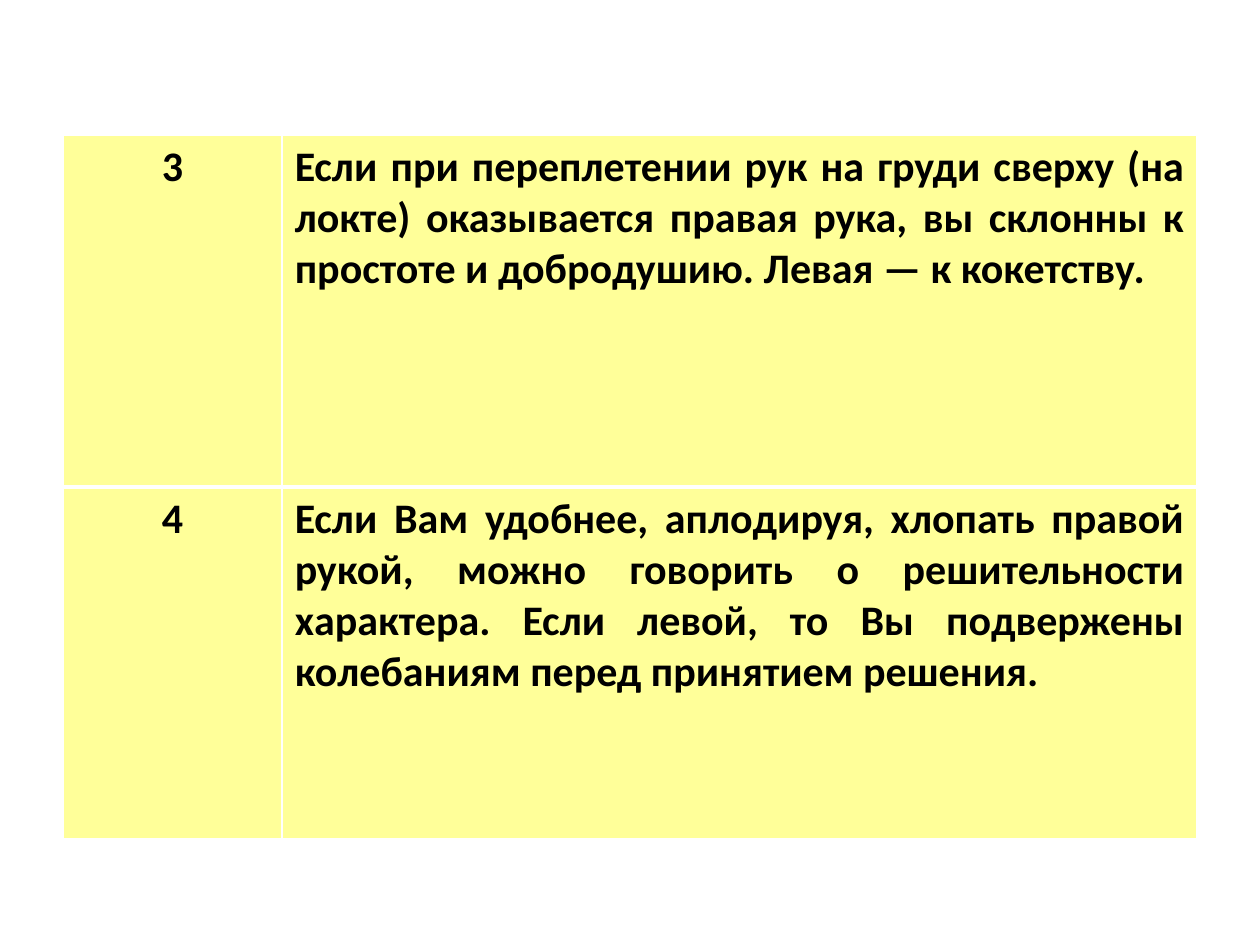
import pptx
import pptx.dml.color
import pptx.enum.text
import pptx.oxml.ns
import pptx.util
from lxml import etree
from pptx.util import Inches

ALIGN = pptx.enum.text.PP_ALIGN
WHITE, BLACK, YELLOW = "FFFFFF", "000000", "FFFF99"
WIDTHS = (1.74, 7.26)
HEIGHT = 2.795
ROWS = (
    ("3", "Если при переплетении рук на груди сверху (на локте) оказывается "
          "правая рука, вы склонны к простоте и добродушию. "
          "Левая — к кокетству."),
    ("4", "Если Вам удобнее, аплодируя, хлопать правой рукой, можно говорить "
          "о решительности характера. Если левой, то Вы подвержены "
          "колебаниям перед принятием решения."),
)


def color(code):
    return pptx.dml.color.RGBColor.from_string(code)


def add_edge(cell, side, width):
    """Draw one white cell border, its width in points."""
    qn = pptx.oxml.ns.qn
    props = cell._tc.get_or_add_tcPr()
    line = etree.SubElement(props, qn(f"a:ln{side}"), w=str(pptx.util.Pt(width)))
    fill = etree.SubElement(line, qn("a:solidFill"))
    etree.SubElement(fill, qn("a:srgbClr"), val=WHITE)


def fill_cell(cell, text, align, edges):
    # Borders come before the fill in the cell's XML
    for side, width in edges.items():
        add_edge(cell, side, width)
    cell.fill.solid()
    cell.fill.fore_color.rgb = color(YELLOW)
    cell.text = text
    para = cell.text_frame.paragraphs[0]
    para.alignment = align
    font = para.font
    font.name, font.size, font.bold = "Calibri", pptx.util.Pt(24), True
    font.color.rgb = color(BLACK)


def add_grid(slide):
    frame = slide.shapes.add_table(
        len(ROWS), len(WIDTHS), Inches(0.5), Inches(1.07),
        Inches(sum(WIDTHS)), Inches(HEIGHT * len(ROWS)))
    table = frame.table
    for col, width in zip(table.columns, WIDTHS):
        col.width = Inches(width)
    for i, texts in enumerate(ROWS):
        table.rows[i].height = Inches(HEIGHT)
        # A thick rule parts the two rows
        edges = {"L": 1, "R": 1, "T": 3 if i else 1, "B": 1 if i else 3}
        for j, align in enumerate((ALIGN.CENTER, ALIGN.JUSTIFY)):
            fill_cell(table.cell(i, j), texts[j], align, edges)


def main():
    deck = pptx.Presentation()
    deck.slide_width, deck.slide_height = Inches(10), Inches(7.5)
    # Blank layout, as the slide has no title
    slide = deck.slides.add_slide(deck.slide_layouts[6])
    add_grid(slide)
    deck.save("out.pptx")


if __name__ == "__main__":
    main()
